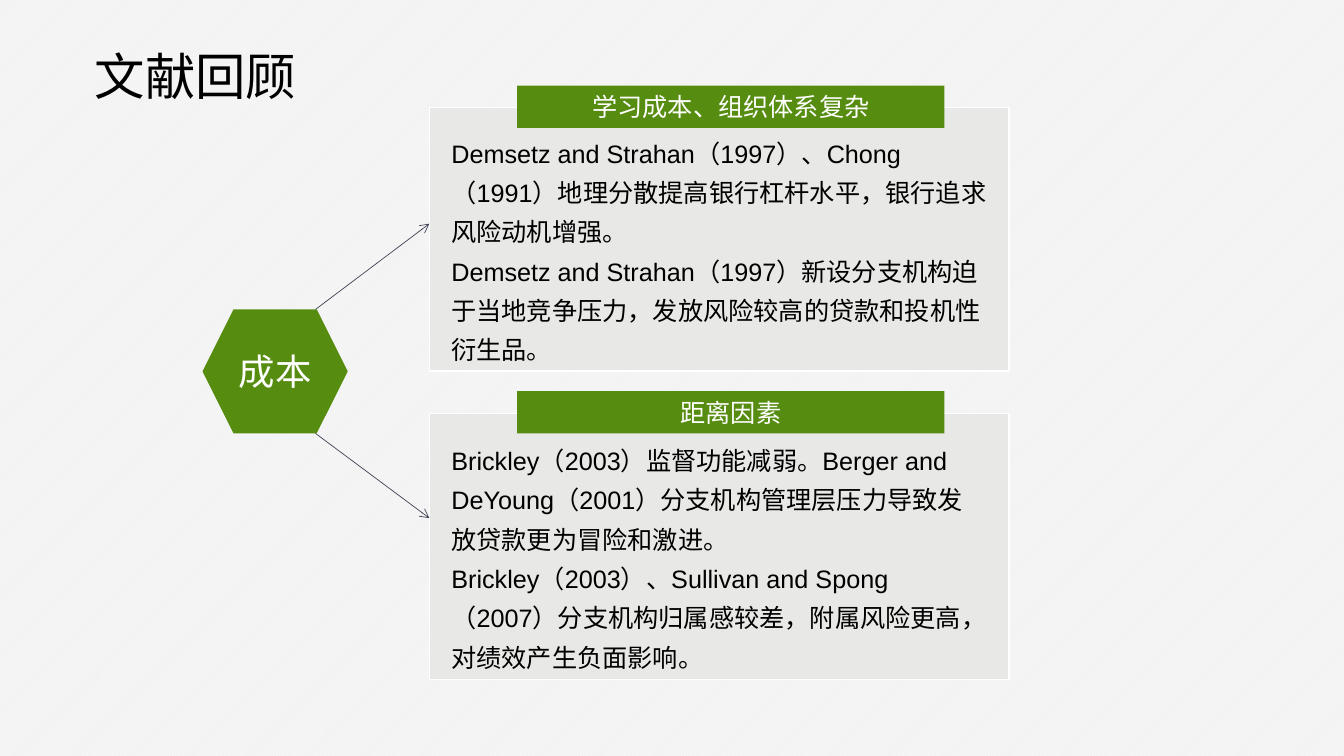
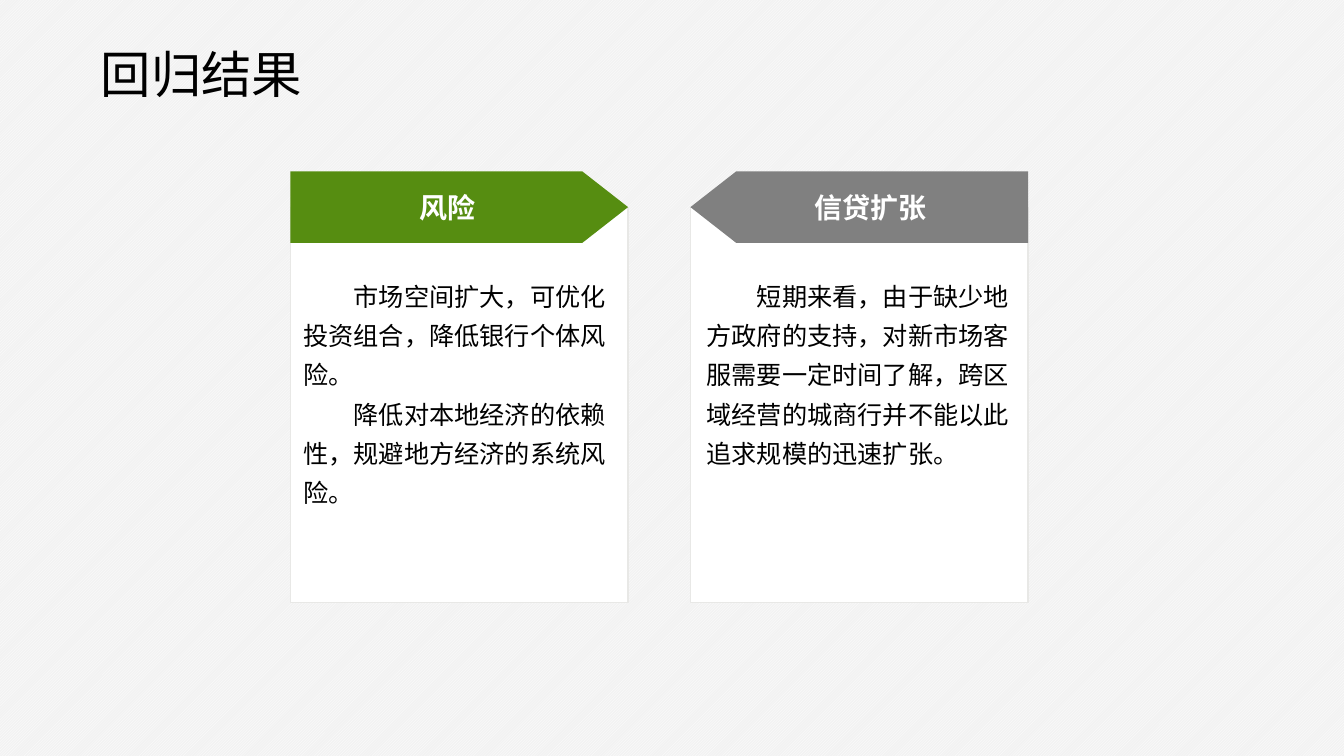
"""Build two slides: the literature review on costs and the regression results."""
from dataclasses import dataclass

from lxml.etree import SubElement
from pptx import Presentation
from pptx.dml.color import RGBColor as RGB
from pptx.enum.dml import MSO_PATTERN as Pattern
from pptx.enum.shapes import MSO_CONNECTOR as Connector, MSO_SHAPE as Shape
from pptx.enum.text import MSO_ANCHOR as Anchor, MSO_AUTO_SIZE as AutoSize, PP_ALIGN as Align
from pptx.oxml.ns import qn
from pptx.util import Pt


@dataclass(frozen=True)
class Theme:
    green: RGB = RGB(0x56, 0x8D, 0x11)
    gray: RGB = RGB(0x80, 0x80, 0x80)
    pale: RGB = RGB(0xE8, 0xE8, 0xE6)
    backdrop: RGB = RGB(0xF2, 0xF2, 0xF2)
    white: RGB = RGB(0xFF, 0xFF, 0xFF)
    black: RGB = RGB(0, 0, 0)
    arrow: RGB = RGB(0x41, 0x44, 0x55)
    latin: str = "Arial"
    title_latin: str = "Calibri"
    chinese: str = "Noto Sans CJK SC"
    title: int = 36
    hub: int = 26
    heading: int = 20
    body: int = 18


theme = Theme()


def add_box(slide, kind, box, fill, line=None):
    shape = slide.shapes.add_shape(kind, *map(Pt, box))
    shape.shadow.inherit = False
    shape.fill.solid()
    shape.fill.fore_color.rgb = fill
    if line is None:
        shape.line.fill.background()
    else:
        shape.line.color.rgb = line
        shape.line.width = Pt(1)
    return shape


def write(shape, text, size, color, font, align=Align.LEFT, anchor=Anchor.MIDDLE,
          insets=(5.6, 2.8), spacing=None, indent=0, bold=False, wrap=True):
    frame = shape.text_frame
    frame.text = text
    frame.word_wrap = wrap
    frame.auto_size = AutoSize.NONE
    frame.vertical_anchor = anchor
    frame.margin_left = frame.margin_right = Pt(insets[0])
    frame.margin_top = frame.margin_bottom = Pt(insets[1])
    for paragraph in frame.paragraphs:
        paragraph.alignment = align
        paragraph.line_spacing = spacing
        if indent:
            paragraph._p.get_or_add_pPr().set("indent", str(Pt(indent)))
        for run in paragraph.runs:
            run.font.size = Pt(size)
            run.font.bold = bold
            run.font.color.rgb = color
            run.font.name = font
            properties = run._r.get_or_add_rPr()
            properties.set("lang", "zh-CN")
            SubElement(properties, qn("a:ea"), typeface=theme.chinese)


presentation = Presentation()
presentation.slide_width, presentation.slide_height = Pt(960), Pt(540)
backdrop = presentation.slide_master.background.fill
backdrop.patterned()
backdrop.pattern = Pattern.LIGHT_UPWARD_DIAGONAL
backdrop.fore_color.rgb = theme.white
backdrop.back_color.rgb = theme.backdrop

slides = []
for text, font, box in [
    ("文献回顾", theme.latin, (60.5, 28.8, 218, 51)),
    ("回归结果", theme.title_latin, (64.8, 27.4, 185, 51)),
]:
    slide = presentation.slides.add_slide(presentation.slide_layouts[5])
    title = slide.shapes.title
    title.left, title.top, title.width, title.height = map(Pt, box)
    write(title, text, theme.title, theme.black, font, anchor=Anchor.TOP, insets=(7.2, 3.6))
    slides.append(slide)
review, results = slides

hub = add_box(review, Shape.HEXAGON, (144.7, 221, 103.7, 88.6), theme.green)
write(hub, "成本", theme.hub, theme.white, theme.chinese, Align.CENTER)

panel_left = 306.7
for heading, top, height, text_top, arrow_start, arrow_end, body in [
    ("学习成本、组织体系复杂", 77, 188, 89.3, 221, 159.8,
     "Demsetz and Strahan（1997）、Chong（1991）地理分散提高银行杠杆水平，银行追求风险动机增强。\n"
     "Demsetz and Strahan（1997）新设分支机构迫于当地竞争压力，发放风险较高的贷款和投机性衍生品。"),
    ("距离因素", 295.2, 190, 308.9, 309.6, 370.1,
     "Brickley（2003）监督功能减弱。Berger and DeYoung（2001）分支机构管理层压力导致发放贷款更为冒险和激进。\n"
     "Brickley（2003）、Sullivan and Spong（2007）分支机构归属感较差，附属风险更高，对绩效产生负面影响。"),
]:
    add_box(review, Shape.RECTANGLE, (panel_left, top, 414, height), theme.pale, theme.white)
    tag = add_box(review, Shape.RECTANGLE, (369.4, top - 15.8, 305.3, 30.2), theme.green)
    write(tag, heading, theme.body, theme.white, theme.chinese, Align.CENTER)
    text_box = review.shapes.add_textbox(Pt(316.8), Pt(text_top), Pt(393.8), Pt(176.4))
    write(text_box, body, theme.body, theme.black, theme.latin, anchor=Anchor.TOP, spacing=1.3)
    arrow = review.shapes.add_connector(
        Connector.STRAIGHT, Pt(225.4), Pt(arrow_start), Pt(panel_left), Pt(arrow_end))
    arrow.line.color.rgb = theme.arrow
    arrow.line.width = Pt(0.5)
    SubElement(arrow.line._get_or_add_ln(), qn("a:tailEnd"), type="arrow")
    SubElement(arrow._element.spPr, qn("a:effectLst"))

for heading, left, text_left, text_height, fill, flipped, body in [
    ("风险", 207.4, 211, 172, theme.green, False,
     "市场空间扩大，可优化投资组合，降低银行个体风险。\n"
     "降低对本地经济的依赖性，规避地方经济的系统风险。"),
    ("信贷扩张", 493.2, 499, 147.6, theme.gray, True,
     "短期来看，由于缺少地方政府的支持，对新市场客服需要一定时间了解，"
     "跨区域经营的城商行并不能以此追求规模的迅速扩张。"),
]:
    add_box(results, Shape.RECTANGLE, (left, 148.3, 241.2, 282.2), theme.white, theme.pale)
    banner = add_box(results, Shape.PENTAGON, (left, 122.4, 241.2, 51.1), fill)
    banner.adjustments[0] = 0.64
    if flipped:
        banner._element.spPr.xfrm.set("flipH", "1")
    write(banner, heading, theme.heading, theme.white, theme.chinese, Align.CENTER,
          bold=True, wrap=False)
    text_box = results.shapes.add_textbox(Pt(text_left), Pt(191.5), Pt(231.8), Pt(text_height))
    write(text_box, body, theme.body, theme.black, theme.latin, anchor=Anchor.TOP,
          spacing=1.3, indent=36)

presentation.save("out.pptx")
